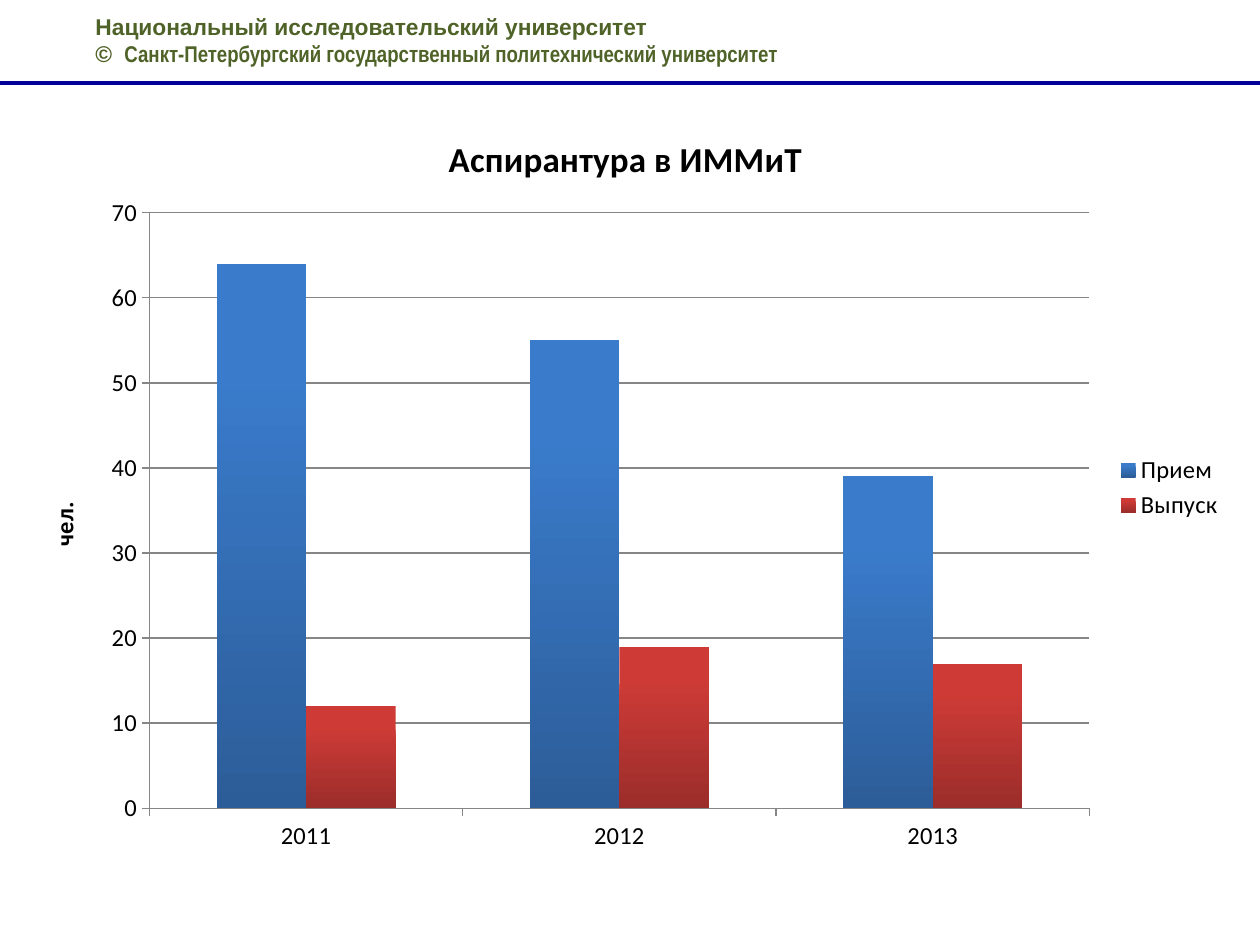
from lxml import etree
from pptx import Presentation
from pptx.chart.data import CategoryChartData
from pptx.dml.color import RGBColor
from pptx.enum.chart import XL_CHART_TYPE, XL_LEGEND_POSITION, XL_TICK_MARK
from pptx.enum.shapes import MSO_CONNECTOR
from pptx.oxml import parse_xml
from pptx.oxml.ns import nsdecls, qn
from pptx.util import Inches, Pt

COLUMNS = XL_CHART_TYPE.COLUMN_CLUSTERED
LEGEND_RIGHT = XL_LEGEND_POSITION.RIGHT
TICK_OUTSIDE = XL_TICK_MARK.OUTSIDE
STRAIGHT = MSO_CONNECTOR.STRAIGHT

WIDTH, HEIGHT = Inches(10), Inches(7.5)
COLORS = {"header": "4F6228", "rule": "000099", "text": "000000", "axis": "868686",
          "blue_top": "3A7BCB", "blue_bottom": "2C5D98",
          "red_top": "CE3B37", "red_bottom": "9B2D2A"}
YEARS = ["2011", "2012", "2013"]
SERIES = [("Прием", [64, 55, 39], "blue"), ("Выпуск", [12, 19, 17], "red")]
PLOT_SHARES = {"x": 0.11, "y": 0.14, "w": 0.77, "h": 0.78}


def rgb(name):
    """Return the named colour."""
    return RGBColor.from_string(COLORS[name])


def style_font(font, size, color="text", name="Calibri", bold=False):
    """Set the face, size, colour and weight of a font."""
    font.name, font.size, font.bold = name, Pt(size), bold
    font.color.rgb = rgb(color)


def add_run(p, text, size, **style):
    """Append a formatted run to a paragraph."""
    r = p.add_run()
    r.text = text
    style_font(r.font, size, **style)


def add_header(s):
    """Add the two lines with the name of the university."""
    box = s.shapes.add_textbox(Inches(0.66), Inches(0.05), Inches(7.8), Inches(0.54))
    tf = box.text_frame
    tf.word_wrap = True
    add_run(tf.paragraphs[0], "Национальный исследовательский университет", 13,
            color="header", name="Arial", bold=True)
    p = tf.add_paragraph()
    tabs = etree.SubElement(p._p.get_or_add_pPr(), qn("a:tabLst"))
    etree.SubElement(tabs, qn("a:tab"), pos=str(Inches(0.23)), algn="l")
    add_run(p, "©\t", 13, color="header", name="Arial", bold=True)
    add_run(p, "Санкт-Петербургский государственный политехнический университет", 13,
            color="header", name="Arial Narrow", bold=True)


def add_rule(s, y):
    """Draw a line across the slide."""
    line = s.shapes.add_connector(STRAIGHT, 0, y, WIDTH, y)
    line.line.color.rgb = rgb("rule")
    line.line.width = Pt(2)
    etree.SubElement(line._element.spPr, qn("a:effectLst"))


def set_title(owner, text, size):
    """Give a chart or an axis a bold title."""
    owner.has_title = True
    title = owner.chart_title if hasattr(owner, "chart_title") else owner.axis_title
    add_run(title.text_frame.paragraphs[0], text, size, bold=True)
    return title


def style_axis(axis):
    """Set the labels, line and ticks of an axis."""
    style_font(axis.tick_labels.font, 14)
    axis.format.line.color.rgb = rgb("axis")
    axis.major_tick_mark = TICK_OUTSIDE


def fill_series(series, hue):
    """Shade the columns of a series from top to bottom."""
    fill = series.format.fill
    fill.gradient()
    fill.gradient_angle = 270
    for stop, end, position in zip(fill.gradient_stops, ("top", "bottom"), (0.2, 1)):
        stop.color.rgb = rgb(f"{hue}_{end}")
        stop.position = position
    series.invert_if_negative = False


def place_plot(chart):
    """Fix the inner plot area by its shares of the chart."""
    area = chart._chartSpace.chart.plotArea
    for old in area.findall(qn("c:layout")):
        area.remove(old)
    modes = '<c:layoutTarget val="inner"/><c:xMode val="edge"/><c:yMode val="edge"/>'
    sizes = "".join(f'<c:{key} val="{share}"/>' for key, share in PLOT_SHARES.items())
    area.insert(0, parse_xml(f'<c:layout {nsdecls("c")}><c:manualLayout>{modes}{sizes}'
                             '</c:manualLayout></c:layout>'))


def add_admissions_chart(s):
    """Add the chart of admissions and graduations by year."""
    data = CategoryChartData()
    data.categories = YEARS
    for name, values, _ in SERIES:
        data.add_series(name, values)
    chart = s.shapes.add_chart(COLUMNS, Inches(0.12), Inches(0.84),
                               Inches(9.69), Inches(6.06), data).chart
    style_font(chart.font, 10)
    set_title(chart, "Аспирантура в ИММиТ", 20)
    plot = chart.plots[0]
    plot.gap_width, plot.overlap, plot.vary_by_categories = 150, 0, False
    for series, (_, _, hue) in zip(plot.series, SERIES):
        fill_series(series, hue)
    for axis in (chart.category_axis, chart.value_axis):
        style_axis(axis)
    value_axis = chart.value_axis
    value_axis.minimum_scale, value_axis.maximum_scale, value_axis.major_unit = 0, 70, 10
    value_axis.major_gridlines.format.line.color.rgb = rgb("axis")
    title = set_title(value_axis, "чел.", 14)
    title.text_frame._txBody.bodyPr.set("rot", "-5400000")
    chart.has_legend = True
    chart.legend.position = LEGEND_RIGHT
    chart.legend.include_in_layout = False
    style_font(chart.legend.font, 14)
    place_plot(chart)


def main():
    """Build the slide and save it."""
    prs = Presentation()
    prs.slide_width, prs.slide_height = WIDTH, HEIGHT
    s = prs.slides.add_slide(prs.slide_layouts[6])
    add_header(s)
    add_rule(s, Inches(0.66))
    add_admissions_chart(s)
    prs.save("out.pptx")


if __name__ == "__main__":
    main()
